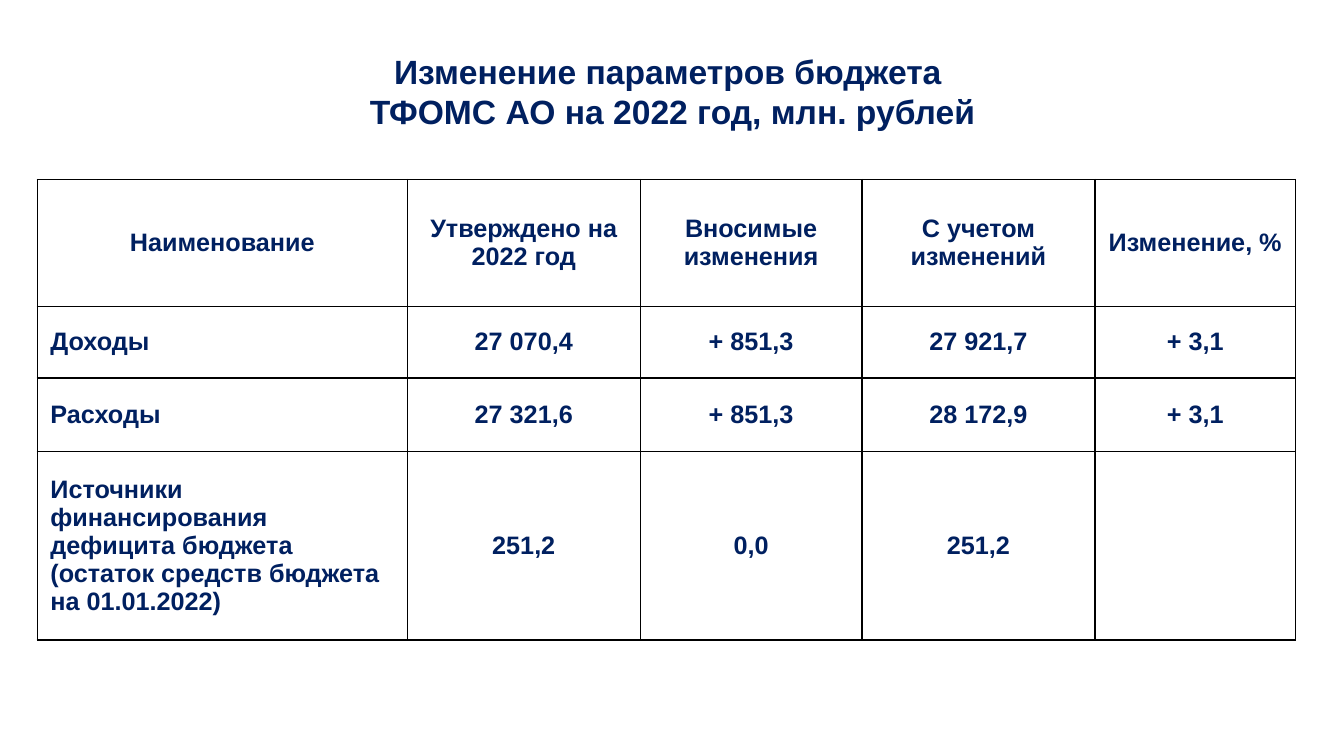
from dataclasses import dataclass

from lxml import etree
from pptx import Presentation
from pptx.dml.color import RGBColor
from pptx.enum import text
from pptx.oxml.ns import qn
from pptx.util import Inches, Pt


@dataclass(frozen=True)
class Theme:
    font: str = "Arial"
    ink: str = "002060"
    rule: str = "000000"
    rule_width: float = 1
    title_size: float = 24
    cell_size: float = 18


THEME = Theme()
TITLE_LINES = ["Изменение параметров бюджета ", "ТФОМС АО на 2022 год, млн. рублей"]
COLUMN_WIDTHS = [3.67, 2.31, 2.2, 2.31, 1.99]
ROW_HEIGHTS = [1.26, 0.71, 0.73, 1.87]
BUDGET = [
    ["Наименование", "Утверждено на 2022 год", "Вносимые изменения",
     "С учетом изменений", "Изменение, %"],
    ["Доходы", "27 070,4", "+ 851,3", "27 921,7", "+ 3,1"],
    ["Расходы", "27 321,6", "+ 851,3", "28 172,9", "+ 3,1"],
    ["Источники финансирования дефицита бюджета "
     "(остаток средств бюджета на 01.01.2022)", "251,2", "0,0", "251,2", ""],
]


def add_run(paragraph, wording, size):
    run = paragraph.add_run()
    run.text = wording
    run.font.name = THEME.font
    run.font.size = Pt(size)
    run.font.bold = True
    run.font.color.rgb = RGBColor.from_string(THEME.ink)


def set_title(slide):
    title = slide.shapes.title
    title.left, title.top = Inches(0.67), Inches(0.5)
    title.width, title.height = Inches(12), Inches(0.81)
    frame = title.text_frame
    frame.word_wrap = True
    frame.vertical_anchor = text.MSO_ANCHOR.MIDDLE
    heading = frame.paragraphs[0]
    heading.alignment = text.PP_ALIGN.CENTER
    for index, line in enumerate(TITLE_LINES):
        if index:
            heading.add_line_break()
        add_run(heading, line, THEME.title_size)


def add_borders(cell):
    properties = cell._tc.get_or_add_tcPr()
    for position, side in enumerate(("a:lnL", "a:lnR", "a:lnT", "a:lnB")):
        line = etree.Element(qn(side), w=str(Pt(THEME.rule_width)))
        fill = etree.SubElement(line, qn("a:solidFill"))
        etree.SubElement(fill, qn("a:srgbClr"), val=THEME.rule)
        properties.insert(position, line)


def fill_cell(cell, wording, alignment):
    cell.fill.background()
    add_borders(cell)
    cell.vertical_anchor = text.MSO_ANCHOR.MIDDLE
    cell.margin_left = cell.margin_right = Inches(0.13)
    cell.margin_top = cell.margin_bottom = Inches(0.05)
    paragraph = cell.text_frame.paragraphs[0]
    paragraph.alignment = alignment
    if wording:
        add_run(paragraph, wording, THEME.cell_size)


def add_budget_table(slide):
    table = slide.shapes.add_table(
        len(ROW_HEIGHTS), len(COLUMN_WIDTHS), Inches(0.37), Inches(1.78),
        Inches(sum(COLUMN_WIDTHS)), Inches(sum(ROW_HEIGHTS))).table
    table.first_row = table.horz_banding = False
    for column, width in zip(table.columns, COLUMN_WIDTHS):
        column.width = Inches(width)
    for row, height in zip(table.rows, ROW_HEIGHTS):
        row.height = Inches(height)
    for r, record in enumerate(BUDGET):
        for c, wording in enumerate(record):
            is_row_name = r > 0 and c == 0
            alignment = text.PP_ALIGN.LEFT if is_row_name else text.PP_ALIGN.CENTER
            fill_cell(table.cell(r, c), wording, alignment)


def main():
    deck = Presentation()
    deck.slide_width, deck.slide_height = Inches(13.33), Inches(7.5)
    slide = deck.slides.add_slide(deck.slide_layouts.get_by_name("Title Only"))
    set_title(slide)
    add_budget_table(slide)
    deck.save("out.pptx")


if __name__ == "__main__":
    main()
